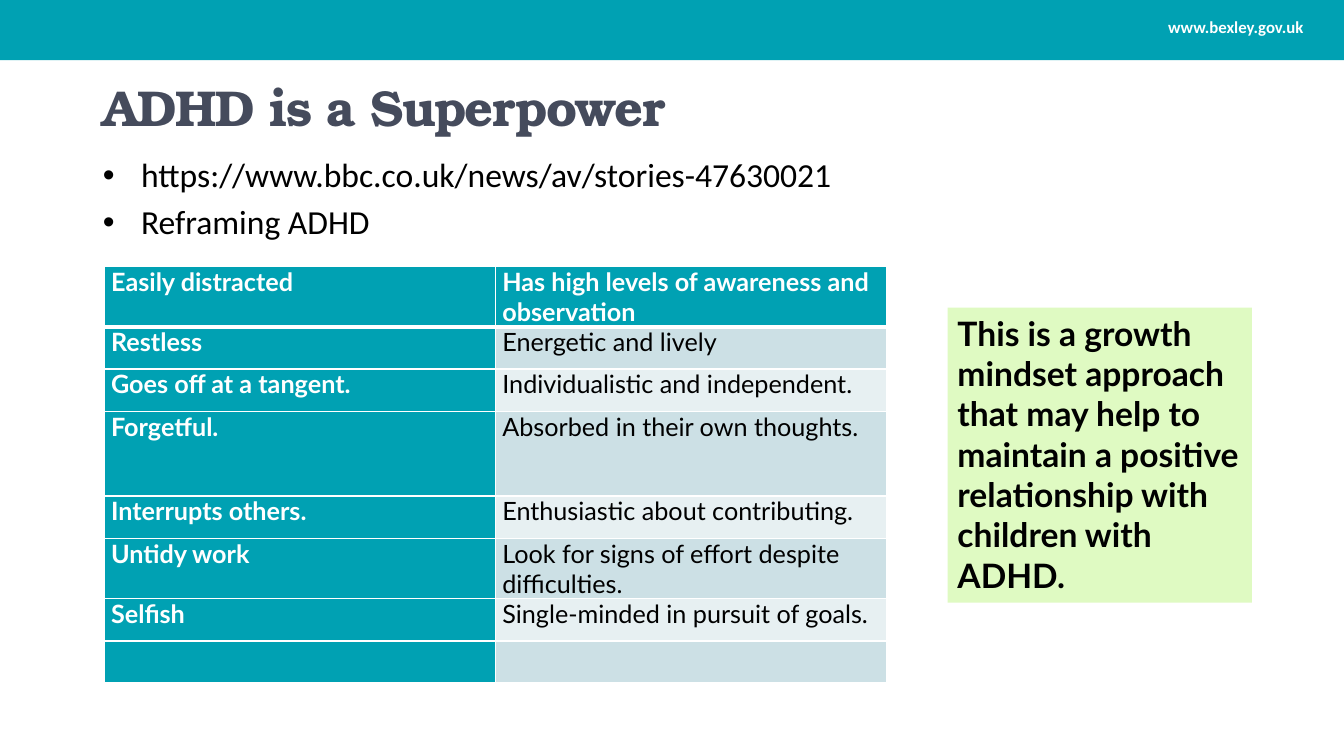
from lxml import etree
from pptx import Presentation
from pptx.dml.color import RGBColor
from pptx.enum import shapes, text
from pptx.oxml import ns
from pptx.util import Cm, Pt

TEAL = RGBColor(0x00, 0xA1, 0xB3)
SLATE = RGBColor(0x45, 0x4B, 0x5C)
BAND_DARK = RGBColor(0xCC, 0xE0, 0xE5)
BAND_LIGHT = RGBColor(0xE7, 0xF0, 0xF2)
LIME = RGBColor(0xDF, 0xFA, 0xC2)
WHITE = RGBColor(0xFF, 0xFF, 0xFF)
BLACK = RGBColor(0x00, 0x00, 0x00)

SITE = "www.bexley.gov.uk"
TITLE = "ADHD is a Superpower"
BULLETS = ["https://www.bbc.co.uk/news/av/stories-47630021", "Reframing ADHD"]
CALLOUT = (
    "This is a growth mindset approach that may help to maintain "
    "a positive relationship with children with ADHD."
)
REFRAMES = [
    ("Easily distracted", "Has high levels of awareness and observation", 1.53),
    ("Restless", "Energetic and lively", 1.06),
    ("Goes off at a tangent.", "Individualistic and independent.", 1.06),
    ("Forgetful.", "Absorbed in their own thoughts.", 2.14),
    ("Interrupts others.", "Enthusiastic about contributing.", 1.06),
    ("Untidy work", "Look for signs of effort despite difficulties.", 1.53),
    ("Selfish", "Single-minded in pursuit of goals.", 1.06),
    ("", "", 1.06),
]
COLUMN_WIDTH = 9.86


def place(shape, left, top, width, height):
    shape.left, shape.top = Cm(left), Cm(top)
    shape.width, shape.height = Cm(width), Cm(height)


def style(para, name, size, color, bold=False):
    font = para.font
    font.name, font.size, font.bold = name, Pt(size), bold
    font.color.rgb = color


def add_block(page, color, *area):
    block = page.shapes.add_shape(shapes.MSO_SHAPE.RECTANGLE, *map(Cm, area))
    block.shadow.inherit = False
    block.fill.solid()
    block.fill.fore_color.rgb = color
    block.line.fill.background()
    return block


def add_borders(cell, bottom):
    props = cell._tc.get_or_add_tcPr()
    edges = [("lnL", 1), ("lnR", 1), ("lnT", 1), ("lnB", bottom)]
    for position, (tag, width) in enumerate(edges):
        line = etree.Element(ns.qn("a:" + tag), w=str(Pt(width)))
        fill = etree.SubElement(line, ns.qn("a:solidFill"))
        etree.SubElement(fill, ns.qn("a:srgbClr"), val=str(WHITE))
        props.insert(position, line)


def add_header(page):
    add_block(page, TEAL, 0, 0, 33.87, 1.52)
    box = page.shapes.add_textbox(Cm(29.01), Cm(0.3), Cm(4.27), Cm(0.76))
    box.text_frame.word_wrap = True
    para = box.text_frame.paragraphs[0]
    para.text = SITE
    para.alignment = text.PP_ALIGN.CENTER
    style(para, "Calibri", 12, WHITE, True)


def fill_title(page):
    title = page.shapes.title
    place(title, 2.34, 1.93, 29.21, 1.52)
    frame = title.text_frame
    frame.auto_size = text.MSO_AUTO_SIZE.NONE
    frame.vertical_anchor = text.MSO_ANCHOR.MIDDLE
    para = frame.paragraphs[0]
    para.text = TITLE
    para.alignment = text.PP_ALIGN.LEFT
    style(para, "TeX Gyre Bonum", 36, SLATE, True)
    para.runs[0].font._element.set("spc", "-100")


def fill_body(page):
    body = page.placeholders[1]
    place(body, 2.34, 3.76, 29.21, 12.09)
    frame = body.text_frame
    frame.auto_size = text.MSO_AUTO_SIZE.NONE
    frame.text = "\n".join(BULLETS)
    for index, para in enumerate(frame.paragraphs):
        props = para._p.get_or_add_pPr()
        props.set("marL", str(Cm(0.96)))
        props.set("indent", str(Cm(-0.96)))
        etree.SubElement(props, ns.qn("a:buChar"), char="•")
        para.space_before = Pt(4.8 if index else 0)
        style(para, "Calibri", 24, BLACK)


def add_reframes(page):
    height = sum(row[2] for row in REFRAMES)
    area = map(Cm, (2.62, 6.71, 2 * COLUMN_WIDTH, height))
    table = page.shapes.add_table(len(REFRAMES), 2, *area).table
    for column in table.columns:
        column.width = Cm(COLUMN_WIDTH)
    for r, (*wording, row_height) in enumerate(REFRAMES):
        table.rows[r].height = Cm(row_height)
        for c, words in enumerate(wording):
            strong = r == 0 or c == 0
            cell = table.cell(r, c)
            cell.margin_left = cell.margin_right = Cm(0.18)
            cell.margin_top = cell.margin_bottom = 0
            cell.fill.solid()
            band = BAND_DARK if r % 2 else BAND_LIGHT
            cell.fill.fore_color.rgb = TEAL if strong else band
            add_borders(cell, 1 if r else 3)
            para = cell.text_frame.paragraphs[0]
            para.text = words
            style(para, "Lato", 18, WHITE if strong else BLACK, strong)


def add_callout(page):
    box = add_block(page, LIME, 23.88, 7.75, 7.67, 7.44)
    frame = box.text_frame
    frame.word_wrap = True
    frame.vertical_anchor = text.MSO_ANCHOR.TOP
    para = frame.paragraphs[0]
    para.text = CALLOUT
    para.alignment = text.PP_ALIGN.LEFT
    style(para, "Lato", 24, BLACK, True)


def main():
    deck = Presentation()
    deck.slide_width, deck.slide_height = Cm(33.87), Cm(19.05)
    page = deck.slides.add_slide(deck.slide_layouts[1])
    add_header(page)
    fill_title(page)
    fill_body(page)
    add_reframes(page)
    add_callout(page)
    deck.save("out.pptx")


if __name__ == "__main__":
    main()
